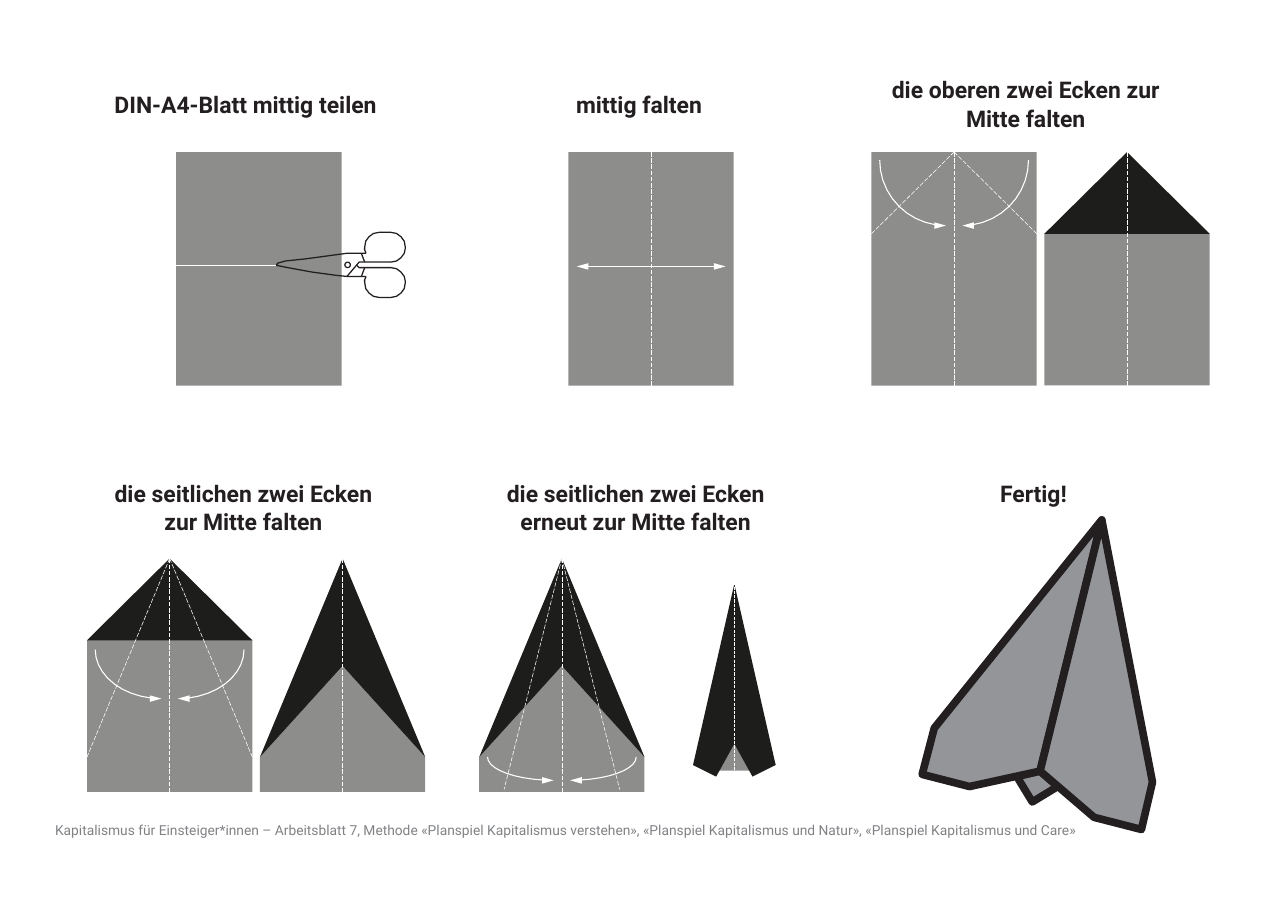
from dataclasses import dataclass
from math import cos, radians, sin

from lxml.etree import SubElement
from pptx import Presentation
from pptx.dml.color import RGBColor
from pptx.enum.dml import MSO_LINE
from pptx.enum.shapes import MSO_CONNECTOR, MSO_SHAPE
from pptx.enum.text import MSO_ANCHOR, PP_ALIGN
from pptx.oxml.ns import qn
from pptx.util import Inches, Pt


@dataclass(frozen=True)
class Theme:
    font: str = "Roboto"
    ink: str = "231F20"
    fold: str = "1D1D1B"
    plane: str = "939598"
    muted: str = "808285"
    white: str = "FFFFFF"
    title: float = 15
    footer: float = 9
    hair: float = 0.36
    arrow: float = 0.72
    outline: float = 0.81
    cut: float = 1
    bold: float = 5


@dataclass(frozen=True)
class Box:
    x: float
    y: float
    w: float
    h: float
    cols: int = 1
    rows: int = 1

    def at(self, u, v):
        return (Inches(self.x + u * self.w / self.cols),
                Inches(self.y + v * self.h / self.rows))


T = Theme()
SHEET_W, SHEET_H = 1.5, 2.12
FIRST_COL, COL_STEP = 2.32, 3.56
ROW_TOPS = (1.38, 5.07)
PAIR = (-1.53, 0.04)
SINGLE = -0.72

STEPS = (
    (0, 0, "DIN-A4-Blatt mittig teilen", -0.09),
    (1, 0, "mittig falten", -0.08),
    (2, 0, "die oberen zwei Ecken zur Mitte falten", -0.13),
    (0, 1, "die seitlichen zwei Ecken zur Mitte falten", -0.11),
    (1, 1, "die seitlichen zwei Ecken erneut zur Mitte falten", -0.11),
    (2, 1, "Fertig!", -0.06),
)
FOOTER = ("Kapitalismus für Einsteiger*innen – Arbeitsblatt 7, Methode "
          "«Planspiel Kapitalismus verstehen», «Planspiel Kapitalismus und "
          "Natur», «Planspiel Kapitalismus und Care»")

LOWER_HANDLE = (
    (64, 40), (81, 40), (81, 41), (80, 43), (80, 45), (81, 51), (84, 55),
    (88, 58), (93, 59), (104, 59), (109, 58), (113, 55), (116, 51), (117, 45),
    (116, 40), (113, 36), (109, 33), (104, 32), (75, 32), (73, 30))
BLADE_AND_HANDLE = (
    (80, 14), (80, 16), (81, 18), (81, 19), (64, 19), (27, 24), (8, 26),
    (1, 28), (0, 30), (10, 32), (32, 36), (54, 39), (64, 40), (75, 27),
    (104, 27), (109, 26), (113, 23), (116, 19), (117, 14), (116, 8), (113, 4),
    (109, 1), (104, 0), (93, 0), (88, 1), (84, 4), (81, 8))


def text(s, box, words, size, color, bold=False, align=PP_ALIGN.LEFT,
         anchor=MSO_ANCHOR.TOP, spacing=1.0, before=1):
    tf = s.shapes.add_textbox(*box.at(0, 0), Inches(box.w), Inches(box.h)).text_frame
    tf.word_wrap = True
    tf.vertical_anchor = anchor
    tf.margin_left = tf.margin_right = tf.margin_bottom = 0
    tf.margin_top = Inches(0.01)
    p = tf.paragraphs[0]
    p.alignment, p.line_spacing, p.space_before = align, spacing, Pt(before)
    r = p.add_run()
    r.text = words
    r.font.name, r.font.size, r.font.bold = T.font, Pt(size), bold
    r.font.color.rgb = RGBColor.from_string(color)


def paint(sp, fill=None, alpha=None, line=None, width=0):
    sp.shadow.inherit = False
    if fill:
        sp.fill.solid()
        sp.fill.fore_color.rgb = RGBColor.from_string(fill)
        if alpha:
            color = sp.fill._xPr.find(qn("a:solidFill"))[0]
            SubElement(color, qn("a:alpha"), val=str(alpha * 1000))
    else:
        sp.fill.background()
    if line:
        sp.line.color.rgb = RGBColor.from_string(line)
        sp.line.width = Pt(width)
        SubElement(sp.line._get_or_add_ln(), qn("a:round"))
    else:
        sp.line.fill.background()


def outline(s, box, points, close=True, **look):
    start, *rest = [box.at(u, v) for u, v in points]
    fb = s.shapes.build_freeform(*start, scale=1.0)
    fb.add_line_segments(rest, close=close)
    paint(fb.convert_to_shape(), **look)


def stroke(s, box, start, end, color=T.white, width=T.hair, dash=False):
    c = s.shapes.add_connector(MSO_CONNECTOR.STRAIGHT, *box.at(*start), *box.at(*end))
    c.line.color.rgb = RGBColor.from_string(color)
    c.line.width = Pt(width)
    if dash:
        c.line.dash_style = MSO_LINE.LONG_DASH
    SubElement(c._element.spPr, qn("a:effectLst"))


def grey(s, box, points):
    outline(s, box, points, fill=T.fold, alpha=50)


def dark(s, box, points):
    outline(s, box, points, fill=T.fold)


def creases(s, box, *ends):
    for end in ((0.5, 1), *ends):
        stroke(s, box, (0.5, 0), end, dash=True)


def arrowhead(s, box, u, v, side):
    base = u - side * 0.07
    outline(s, box, ((base, v - 0.014), (u, v), (base, v + 0.014)), fill=T.white)


def fold_arrows(s, box, top, bottom):
    for side in (1, -1):
        arc = [(0.5 - side * (0.05 + 0.4 * cos(radians(a))),
                top + (bottom - top) * sin(radians(a))) for a in range(0, 82, 9)]
        arc = [(u if side > 0 else u, v) for u, v in arc]
        outline(s, box, arc, close=False, line=T.white, width=T.arrow)
        arrowhead(s, box, 0.5 - side * 0.05, bottom, side)


def sheet(s, box):
    grey(s, box, ((0, 0), (1, 0), (1, 1), (0, 1)))


def house(s, box):
    grey(s, box, ((0, 0.35), (1, 0.35), (1, 1), (0, 1)))
    dark(s, box, ((0, 0.35), (0.5, 0), (1, 0.35)))


def kite(s, box):
    grey(s, box, ((0.5, 0.46), (0, 0.85), (0, 1), (1, 1), (1, 0.85)))
    dark(s, box, ((1, 0.85), (0.5, 0), (0, 0.85), (0.5, 0.46)))


def dart(s, box):
    grey(s, box, ((0.79, 0.97), (0.28, 0.97), (0, 0.94), (0.5, 0.43), (1, 0.94)))
    dark(s, box, ((1, 0.94), (0.5, 0), (0, 0.94), (0.28, 1), (0.5, 0.83), (0.72, 1)))
    stroke(s, box, (0.5, -0.03), (0.5, 0.97), width=0.25, dash=True)


def scissors(s, box):
    look = dict(line=T.ink, width=T.outline)
    screw = s.shapes.add_shape(MSO_SHAPE.OVAL, *box.at(62, 27), Inches(0.05), Inches(0.05))
    paint(screw, **look)
    outline(s, box, LOWER_HANDLE, close=False, **look)
    outline(s, box, BLADE_AND_HANDLE, **look)
    for start, end in (((80, 27), (77, 19)), ((80, 32), (77, 40))):
        stroke(s, box, start, end, T.ink, T.outline)


def paper_plane(s, box):
    nose, keel = (163, 0), (107, 228)
    tail = (keel, (86, 233), (100, 256), (123, 242))
    left = (nose, keel, (43, 242), (0, 231), (11, 189))
    right = (nose, keel, (156, 270), (199, 281), (209, 238))
    for part in (tail, left, right):
        outline(s, box, part, fill=T.plane, line=T.ink, width=T.bold)


def step_box(col, row, offset):
    return Box(FIRST_COL + col * COL_STEP + offset, ROW_TOPS[row], SHEET_W, SHEET_H)


def step_title(s, col, row, words, shift):
    width = 2.55
    left = FIRST_COL + col * COL_STEP + shift - width / 2
    text(s, Box(left, (0.67, 4.33)[row], width, 0.53), words, T.title, T.ink,
         bold=True, align=PP_ALIGN.CENTER, spacing=1.04,
         anchor=(MSO_ANCHOR.MIDDLE, MSO_ANCHOR.TOP)[row])


def cut_step(s, box):
    sheet(s, box)
    stroke(s, box, (0, 0.486), (0.607, 0.486), width=T.cut)
    scissors(s, Box(box.x + 0.91, box.y + 0.73, 1.17, 0.59, 117, 59))


def halve_step(s, box):
    sheet(s, box)
    creases(s, box)
    stroke(s, box, (0.11, 0.49), (0.89, 0.49), width=T.arrow)
    arrowhead(s, box, 0.05, 0.49, -1)
    arrowhead(s, box, 0.95, 0.49, 1)


def fold_step(s, before, after, shape, ends, arrows, result):
    shape(s, before)
    creases(s, before, *ends)
    fold_arrows(s, before, *arrows)
    result(s, after)
    if result is not dart:
        creases(s, after)


def main():
    prs = Presentation()
    prs.slide_width, prs.slide_height = Inches(11.69), Inches(8.27)
    s = prs.slides.add_slide(prs.slide_layouts[6])
    for step in STEPS:
        step_title(s, *step)
    cut_step(s, step_box(0, 0, SINGLE))
    halve_step(s, step_box(1, 0, SINGLE))
    fold_step(s, step_box(2, 0, PAIR[0]), step_box(2, 0, PAIR[1]), sheet,
              ((0, 0.35), (1, 0.35)), (0.035, 0.315), house)
    fold_step(s, step_box(0, 1, PAIR[0]), step_box(0, 1, PAIR[1]), house,
              ((0, 0.85), (1, 0.85)), (0.39, 0.6), kite)
    fold_step(s, step_box(1, 1, PAIR[0]), Box(6.29, 5.3, 0.75, 1.75), kite,
              ((0.15, 0.99), (0.85, 0.99)), (0.85, 0.95), dart)
    paper_plane(s, Box(8.37, 4.72, 2.09, 2.81, 209, 281))
    text(s, Box(0.5, 7.45, 9.44, 0.17), FOOTER, T.footer, T.muted, before=0.5)
    prs.save("out.pptx")


if __name__ == "__main__":
    main()
